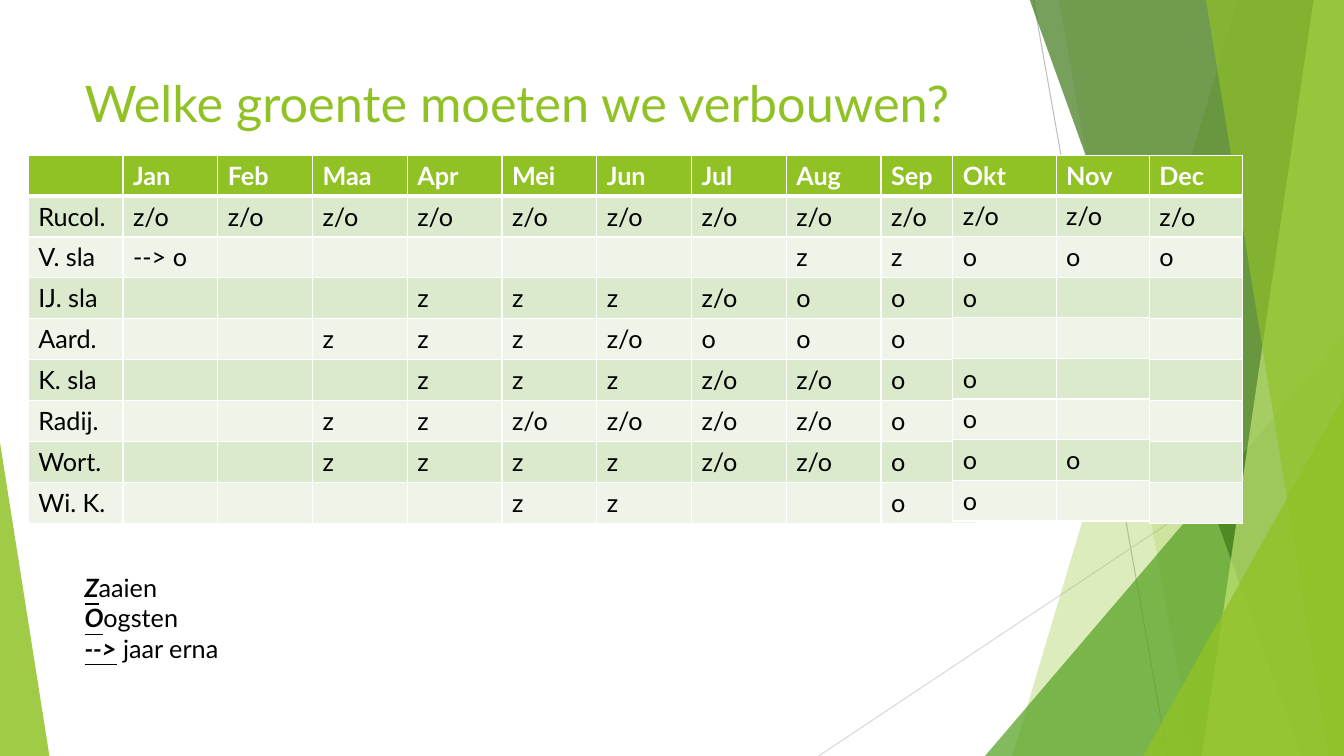
import lxml.etree
import pptx
import pptx.dml.color
import pptx.enum.shapes
import pptx.oxml.ns
import pptx.util

# Content; all lengths are px, 100 to the inch
PX = 9144
WIDTH, HEIGHT = 1333, 750
FONT = "Lato"
GREEN, WHITE, BLACK = "90C226", "FFFFFF", "000000"
BANDS = ["DBE9CD", "EEF4E8"]

TITLE = "Welke groente moeten we verbouwen?"
LEGEND = [("Z", "aaien"), ("O", "ogsten"), ("-->", " jaar erna")]
CALENDAR = [
    ["", "Jan", "Feb", "Maa", "Apr", "Mei", "Jun", "Jul", "Aug", "Sep", "Okt", "Nov", "Dec"],
    ["Rucol."] + ["z/o"] * 12,
    ["V. sla", "--> o", "", "", "", "", "", "", "z", "z", "o", "o", "o"],
    ["IJ. sla", "", "", "", "z", "z", "z", "z/o", "o", "o", "o", "", ""],
    ["Aard.", "", "", "z", "z", "z", "z/o", "o", "o", "o", "", "", ""],
    ["K. sla", "", "", "", "z", "z", "z", "z/o", "z/o", "o", "o", "", ""],
    ["Radij.", "", "", "z", "z", "z/o", "z/o", "z/o", "z/o", "o", "o", "", ""],
    ["Wort.", "", "", "z", "z", "z", "z", "z/o", "z/o", "o", "o", "o", ""],
    ["Wi. K.", "", "", "", "", "z", "z", "", "", "o", "o", "", ""],
]
# First column, end column, left, width, height of each table
TABLES = [(0, 10, 28, 940, 365), (10, 12, 945, 205, 363), (12, 13, 1140, 92, 365)]
TABLE_TOP = 154

# Start, end, colour of the thin lines
LINES = [((1025, 0), (1158, 750), "BFBFBF"), ((1333, 403), (812, 750), "D9D9D9")]
# Bands running to the right edge: top x, bottom x, colour, opacity in percent
# Triangles: left, top, width, apex position, colour, opacity in percent
DECORATION = [
    ("band", (1228, 1004), GREEN, 30),
    ("band", (1050, 1183), GREEN, 20),
    ("triangle", (977, 333, 356, 1), "54A021", 72),
    ("band", (1021, 1291), "3F7819", 70),
    ("band", (1303, 1192), "C0E474", 70),
    ("band", (1196, 1318), GREEN, 65),
    ("triangle", (1134, 393, 199, 1), GREEN, 80),
    ("triangle", (0, 439, 49, 0), GREEN, 85),
]


def color(hex_string):
    return pptx.dml.color.RGBColor.from_string(hex_string)


def box(*lengths):
    return [round(length * PX) for length in lengths]


def add_child(parent, tag, **attributes):
    child = lxml.etree.SubElement(parent, pptx.oxml.ns.qn(tag))
    for name, value in attributes.items():
        child.set(name, str(value))
    return child


def style_run(run, size, hex_string, bold=False):
    run.font.name = FONT
    run.font.size = pptx.util.Pt(size)
    run.font.bold = bold
    run.font.color.rgb = color(hex_string)


def add_line(slide, start, end, hex_string):
    line = slide.shapes.add_connector(
        pptx.enum.shapes.MSO_CONNECTOR.STRAIGHT, *box(*start, *end))
    line.line.color.rgb = color(hex_string)
    line.line.width = pptx.util.Pt(0.75)
    add_child(line._element.spPr, "a:effectLst")


def add_decoration(slide, kind, geometry, hex_string, opacity):
    if kind == "band":
        top_x, bottom_x = geometry
        builder = slide.shapes.build_freeform(top_x, -1, scale=PX)
        builder.add_line_segments([(WIDTH, -1), (WIDTH, HEIGHT), (bottom_x, HEIGHT)], close=True)
        shape = builder.convert_to_shape()
    else:
        left, top, width, apex = geometry
        shape = slide.shapes.add_shape(
            pptx.enum.shapes.MSO_SHAPE.ISOSCELES_TRIANGLE, *box(left, top, width, HEIGHT - top))
        shape.adjustments[0] = apex
    shape.shadow.inherit = False
    shape.line.fill.background()
    shape.fill.solid()
    shape.fill.fore_color.rgb = color(hex_string)
    fill_color = shape._element.spPr.find(".//" + pptx.oxml.ns.qn("a:srgbClr"))
    add_child(fill_color, "a:alpha", val=opacity * 1000)


def style_cell(cell, fill, bottom_width):
    properties = cell._tc.get_or_add_tcPr()
    for side in "LRTB":
        width = bottom_width if side == "B" else 1
        border = add_child(properties, "a:ln" + side, w=pptx.util.Pt(width))
        add_child(add_child(border, "a:solidFill"), "a:srgbClr", val=WHITE)
    cell.fill.solid()
    cell.fill.fore_color.rgb = color(fill)


def add_calendar_table(slide, first, end, left, width, height):
    rows, columns = len(CALENDAR), end - first
    table = slide.shapes.add_table(
        rows, columns, *box(left, TABLE_TOP, width, height)).table
    table.first_row = table.horz_banding = False
    for column in table.columns:
        column.width = round(width * PX / columns)
    for i, (row, labels) in enumerate(zip(table.rows, CALENDAR)):
        row.height = round(height * PX / rows)
        header = i == 0
        for cell, label in zip(row.cells, labels[first:end]):
            style_cell(cell, GREEN if header else BANDS[(i - 1) % 2], 3 if header else 1)
            if label:
                cell.text_frame.text = label
                run = cell.text_frame.paragraphs[0].runs[0]
                style_run(run, 18, WHITE if header else BLACK, header)


def add_text_frame(slide, *place):
    text_frame = slide.shapes.add_textbox(*box(*place)).text_frame
    text_frame.word_wrap = True
    return text_frame


def main():
    presentation = pptx.Presentation()
    presentation.slide_width, presentation.slide_height = box(WIDTH, HEIGHT)
    slide = presentation.slides.add_slide(presentation.slide_layouts[6])

    # Background decoration
    for line in LINES:
        add_line(slide, *line)
    for part in DECORATION:
        add_decoration(slide, *part)

    # Title
    title = add_text_frame(slide, 74, 67, 940, 144)
    title.text = TITLE
    style_run(title.paragraphs[0].runs[0], 36, GREEN)

    # Sowing and harvest calendar
    for table in TABLES:
        add_calendar_table(slide, *table)

    # Legend
    legend = add_text_frame(slide, 74, 563, 546, 101)
    legend.text = "\n".join(key for key, _ in LEGEND)
    for paragraph, (_, rest) in zip(legend.paragraphs, LEGEND):
        key_run = paragraph.runs[0]
        style_run(key_run, 18, BLACK, True)
        key_run.font.italic = key_run.font.underline = True
        rest_run = paragraph.add_run()
        rest_run.text = rest
        style_run(rest_run, 18, BLACK)

    presentation.save("out.pptx")


if __name__ == "__main__":
    main()
